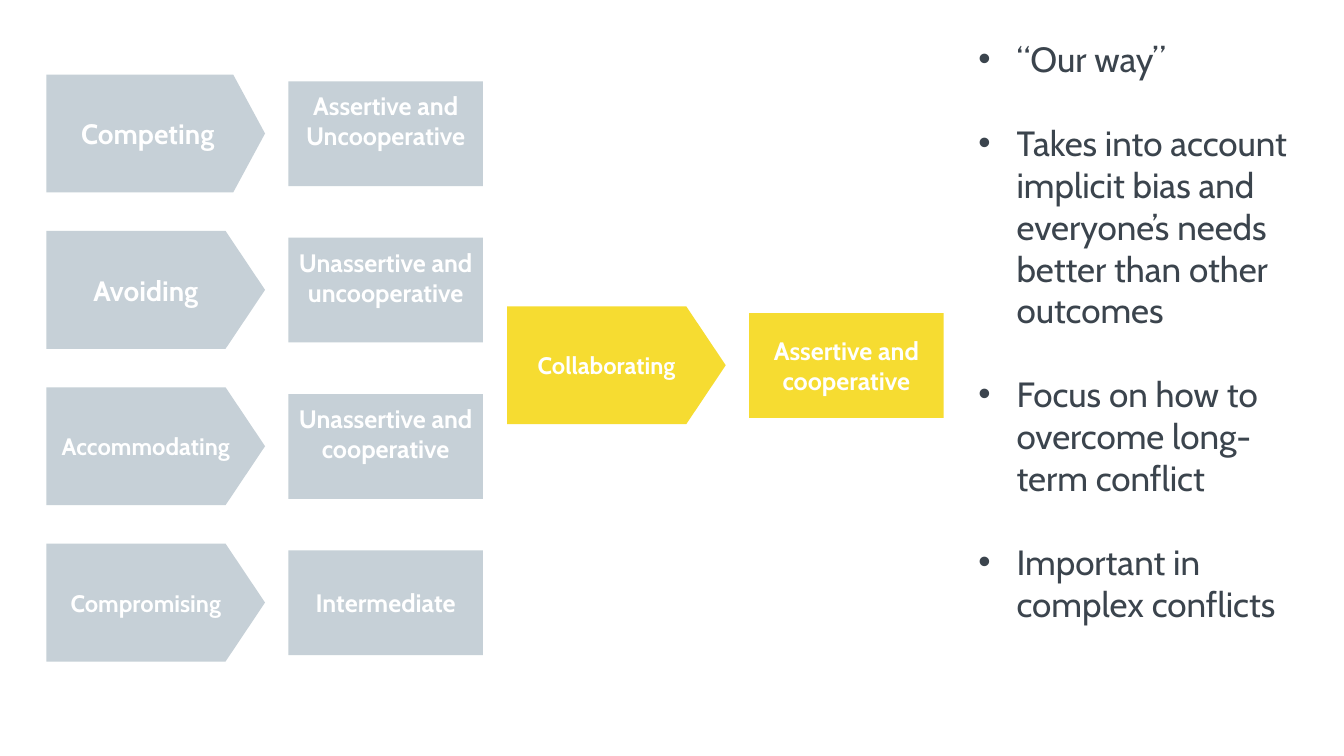
from lxml.etree import SubElement
from pptx import Presentation
from pptx.dml.color import RGBColor
from pptx.enum.shapes import MSO_SHAPE as Preset
from pptx.enum.text import MSO_ANCHOR as Anchor, PP_ALIGN as Align
from pptx.oxml.ns import qn
from pptx.util import Cm, Pt

GREY = RGBColor(0xC6, 0xD0, 0xD7)
YELLOW = RGBColor(0xF6, 0xDC, 0x31)
WHITE = RGBColor(0xFF, 0xFF, 0xFF)
INK = RGBColor(0x3B, 0x44, 0x4D)
FONT = "Cabin"

LEFT, TOP, ROW_PITCH = 1.17, 1.88, 3.94
ARROW_W, ARROW_H = 5.51, 2.97
CARD_DX, CARD_DY = 6.1, 0.17
CARD_W, CARD_H = 4.9, 2.64

# name, size, arrow point, description, anchor
styles = [
    ("Competing", 20, 0.27, "Assertive and Uncooperative", Anchor.TOP),
    ("Avoiding", 20, 0.335, "Unassertive and uncooperative", Anchor.TOP),
    ("Accommodating", 17, 0.335, "Unassertive and cooperative", Anchor.TOP),
    ("Compromising", 17, 0.335, "Intermediate", Anchor.MIDDLE),
]
collaborating = ("Collaborating", 17, 0.335, "Assertive and cooperative", Anchor.MIDDLE)
benefits = [
    "“Our way”",
    "Takes into account implicit bias and everyone’s needs better than other outcomes",
    "Focus on how to overcome long-term conflict",
    "Important in complex conflicts",
]

prs = Presentation()
prs.slide_width, prs.slide_height = Cm(33.87), Cm(19.05)
slide = prs.slides.add_slide(prs.slide_layouts[6])


def add_block(preset, left, top, width, height, color, text, size, anchor):
    """Add a filled shape with centred bold white text."""
    block = slide.shapes.add_shape(preset, Cm(left), Cm(top), Cm(width), Cm(height))
    block.shadow.inherit = False
    block.fill.solid()
    block.fill.fore_color.rgb = color
    block.line.fill.background()
    frame = block.text_frame
    frame.word_wrap = True
    frame.vertical_anchor = anchor
    frame.margin_left = frame.margin_right = Cm(0.2)
    frame.margin_top = frame.margin_bottom = Cm(0.23)
    label = frame.paragraphs[0]
    label.text = text
    label.alignment = Align.CENTER
    label.font.name, label.font.size, label.font.bold = FONT, Pt(size), True
    label.font.color.rgb = WHITE
    return block


placed = [(LEFT, TOP + row * ROW_PITCH, GREY, style) for row, style in enumerate(styles)]
placed.append((12.78, 7.72, YELLOW, collaborating))

for left, top, color, (name, size, point, description, anchor) in placed:
    arrow = add_block(Preset.PENTAGON, left, top, ARROW_W, ARROW_H,
                      color, name, size, Anchor.MIDDLE)
    arrow.adjustments[0] = point
    add_block(Preset.RECTANGLE, left + CARD_DX, top + CARD_DY, CARD_W, CARD_H,
              color, description, 18, anchor)

benefit_list = slide.shapes.add_textbox(Cm(24.41), Cm(0.81), Cm(8.97), Cm(16)).text_frame
benefit_list.word_wrap = True
for index, benefit in enumerate(benefits):
    item = benefit_list.add_paragraph() if index else benefit_list.paragraphs[0]
    item.text = benefit
    item.space_after = Pt(30)
    item.font.name, item.font.size = FONT, Pt(25)
    item.font.color.rgb = INK
    properties = item._p.get_or_add_pPr()
    properties.set("marL", str(Cm(0.96)))
    properties.set("indent", str(Cm(-0.96)))
    bullet_font = SubElement(properties, qn("a:buFont"))
    bullet_font.set("typeface", "Arial")
    bullet = SubElement(properties, qn("a:buChar"))
    bullet.set("char", "•")
    # The schema puts default run properties after the bullet
    run_defaults = properties.find(qn("a:defRPr"))
    if run_defaults is not None:
        properties.append(run_defaults)

prs.save("out.pptx")
